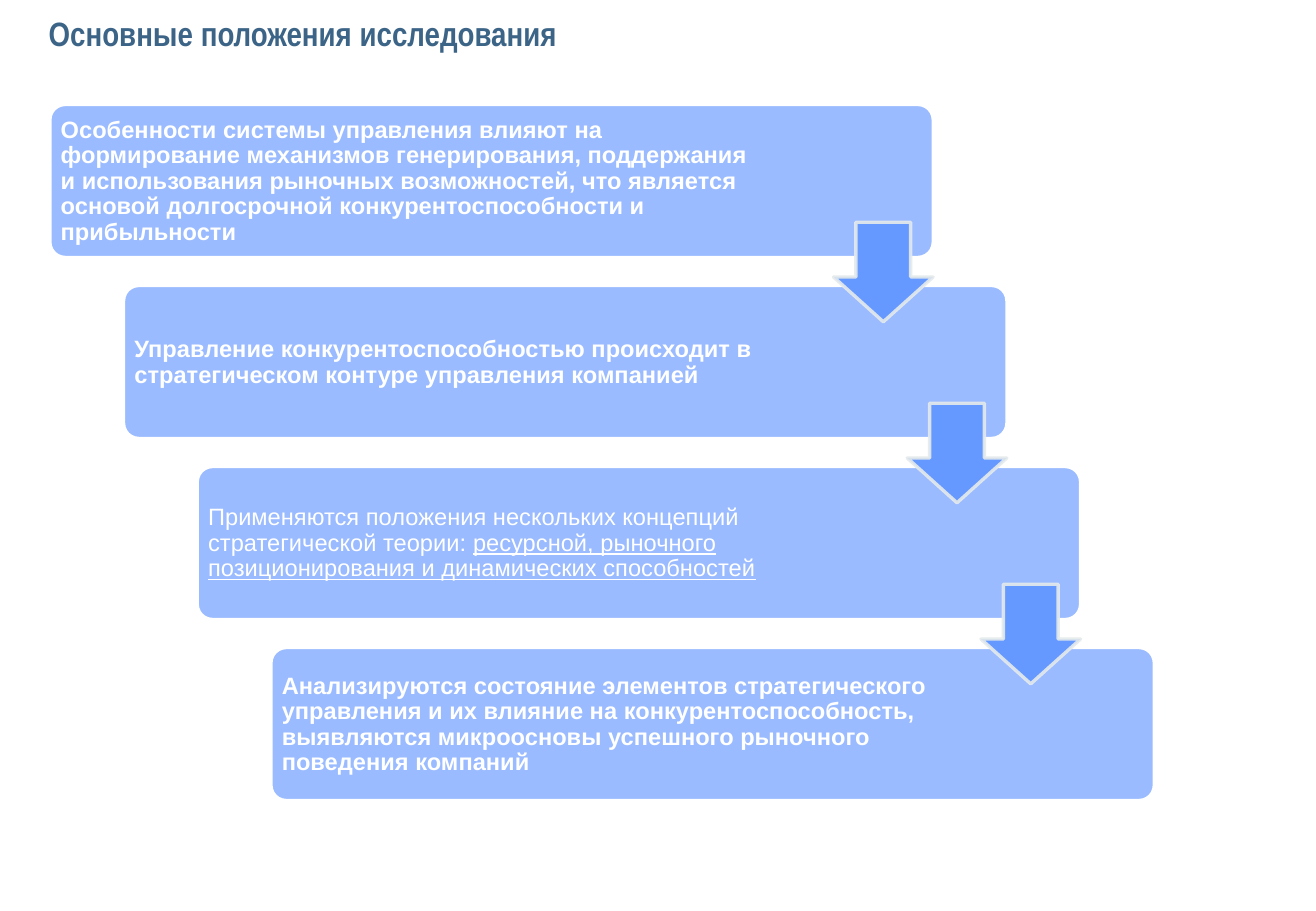
"""Builds a slide with a staircase of four statements linked by arrows."""
from dataclasses import dataclass

from lxml.etree import SubElement
from pptx import Presentation
from pptx.dml.color import RGBColor
from pptx.dml.fill import FillFormat
from pptx.enum.shapes import MSO_SHAPE as Preset
from pptx.enum.text import MSO_ANCHOR as Anchor, MSO_AUTO_SIZE as AutoSize, PP_ALIGN as Align
from pptx.oxml.ns import qn
from pptx.slide import Slide
from pptx.text.text import TextFrame
from pptx.util import Inches, Pt

SLIDE_WIDTH, SLIDE_HEIGHT = Inches(10.83), Inches(7.5)
COLORS = {"title": "3B6487", "block": "6699FF", "white": "FFFFFF", "arrow_edge": "E5EAEC"}


@dataclass(frozen=True)
class Area:
    """Holds a rectangle in percent of the slide's width and height."""
    left: float
    top: float
    width: float
    height: float

    def step(self, index: int) -> "Area":
        return Area(self.left + 5.6 * index, self.top + 19.87 * index, self.width, self.height)

    def box(self) -> tuple[int, int, int, int]:
        return (round(SLIDE_WIDTH * self.left / 100), round(SLIDE_HEIGHT * self.top / 100),
                round(SLIDE_WIDTH * self.width / 100), round(SLIDE_HEIGHT * self.height / 100))


@dataclass(frozen=True)
class Span:
    text: str
    bold: bool = False
    underline: bool = False


@dataclass(frozen=True)
class Block:
    preset: Preset
    area: Area
    adjustments: tuple[float, ...]
    edge: str
    fill_alpha: int = 100
    edge_alpha: int = 100


TITLE_AREA = Area(2.77, 0.27, 84.86, 6.8)
TEXT_AREA = Area(4.06, 12, 53.55, 15.87)
CARD = Block(Preset.ROUNDED_RECTANGLE, Area(3.79, 11.47, 67.13, 16.8), (0.1,), "white",
             fill_alpha=66)
ARROW = Block(Preset.DOWN_ARROW, Area(63.34, 24.4, 7.57, 10.93), (0.55, 0.45), "arrow_edge",
              edge_alpha=90)
STATEMENTS = [
    [Span("Особенности системы управления влияют на формирование механизмов генерирования, "
          "поддержания и использования рыночных возможностей, что является основой "
          "долгосрочной конкурентоспособности и прибыльности", bold=True)],
    [Span("Управление конкурентоспособностью происходит в стратегическом контуре "
          "управления компанией", bold=True)],
    [Span("Применяются положения нескольких концепций стратегической теории: "),
     Span("ресурсной, рыночного позиционирования и динамических способностей", underline=True)],
    [Span("Анализируются состояние элементов стратегического управления и их влияние на "
          "конкурентоспособность, выявляются микроосновы успешного рыночного поведения "
          "компаний", bold=True)],
]


def paint(fill: FillFormat, color: str, alpha: int) -> None:
    fill.solid()
    fill.fore_color.rgb = RGBColor.from_string(COLORS[color])
    if alpha < 100:
        tint = fill._xPr.find(qn("a:solidFill"))[0]
        SubElement(tint, qn("a:alpha"), val=str(alpha * 1000))


def write(frame: TextFrame, spans: list[Span], font: str, size: int, color: str,
          line_spacing: float) -> None:
    frame.word_wrap = True
    frame.auto_size = AutoSize.NONE
    frame.vertical_anchor = Anchor.MIDDLE
    para = frame.paragraphs[0]
    para.alignment = Align.LEFT
    para.line_spacing = line_spacing
    for span in spans:
        run = para.add_run()
        run.text = span.text
        run.font.name = font
        run.font.size = Pt(size)
        run.font.bold = span.bold
        run.font.underline = span.underline
        run.font.color.rgb = RGBColor.from_string(COLORS[color])


def add_title(page: Slide, text: str) -> None:
    title = page.shapes.title
    title.left, title.top, title.width, title.height = TITLE_AREA.box()
    write(title.text_frame, [Span(text, bold=True)], "Arial Narrow", 20, "title", 1.0)


def add_block(page: Slide, block: Block, index: int) -> None:
    shape = page.shapes.add_shape(block.preset, *block.area.step(index).box())
    shape.shadow.inherit = False
    for position, value in enumerate(block.adjustments):
        shape.adjustments[position] = value
    paint(shape.fill, "block", block.fill_alpha)
    shape.line.width = Pt(2)
    paint(shape.line.fill, block.edge, block.edge_alpha)


def add_statement(page: Slide, spans: list[Span], index: int) -> None:
    frame = page.shapes.add_textbox(*TEXT_AREA.step(index).box()).text_frame
    frame.margin_left = frame.margin_right = Inches(0.06)
    frame.margin_top = frame.margin_bottom = Inches(0.06)
    write(frame, spans, "Arial", 14, "white", 0.9)


def main() -> None:
    deck = Presentation()
    deck.slide_width, deck.slide_height = SLIDE_WIDTH, SLIDE_HEIGHT
    page = deck.slides.add_slide(deck.slide_layouts[5])
    add_title(page, "Основные положения исследования")
    for index, spans in enumerate(STATEMENTS):
        add_block(page, CARD, index)
        add_statement(page, spans, index)
    for index in range(len(STATEMENTS) - 1):
        add_block(page, ARROW, index)
    deck.save("out.pptx")


if __name__ == "__main__":
    main()
